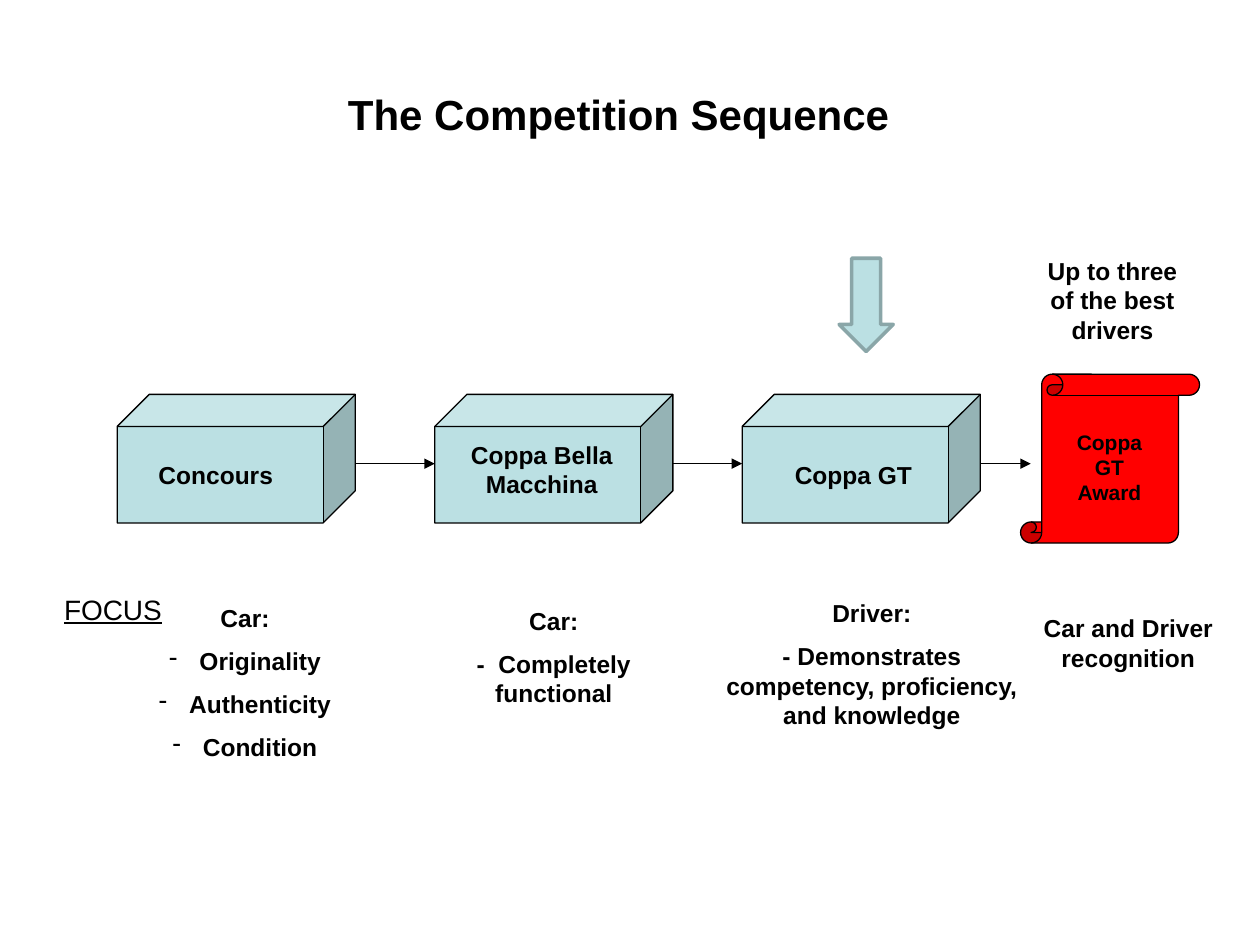
from lxml import etree
from pptx import Presentation
from pptx.dml.color import RGBColor
from pptx.enum.shapes import MSO_CONNECTOR, MSO_SHAPE
from pptx.enum.text import MSO_ANCHOR, PP_ALIGN
from pptx.oxml.ns import qn
from pptx.util import Inches, Pt

CUBE, SCROLL, DOWN = MSO_SHAPE.CUBE, MSO_SHAPE.VERTICAL_SCROLL, MSO_SHAPE.DOWN_ARROW
LINE = MSO_CONNECTOR.STRAIGHT
LEFT, MID = PP_ALIGN.LEFT, PP_ALIGN.CENTER
CENTER = MSO_ANCHOR.MIDDLE
BLACK, BLUE, GRAY, RED = "000000", "BBE0E3", "8AA6A8", "FF0000"

TITLE = "The Competition Sequence"
COLS = [0.93, 3.45, 5.89]
ENDS = [3.45, 5.89, 8.18]
TOP, WIDE, HIGH = 3.13, 1.89, 1.02
FLOW = 3.68
INDENT = 0.24

SHAPES = [(CUBE, (x, TOP, WIDE, HIGH), [0.25], BLUE, BLACK, 0.75) for x in COLS] + [
    (SCROLL, (8.1, 2.97, 1.42, 1.34), [0.125], RED, BLACK, 0.75),
    (DOWN, (6.66, 2.05, 0.43, 0.74), [0.536, 0.5], BLUE, GRAY, 2),
]
LABELS = [
    ((1.16, 3.6, 1.57, 0.33), LEFT, 14, ["Concours"]),
    ((3.59, 3.44, 1.42, 0.57), MID, 14, ["Coppa Bella Macchina"]),
    ((6.21, 3.6, 1.34, 0.33), LEFT, 14, ["Coppa GT"]),
    ((8.41, 3.36, 0.79, 0.7), MID, 12, ["Coppa GT Award"]),
    ((8.2, 1.98, 1.26, 0.81), MID, 14, ["Up to three of the best drivers"]),
    ((3.37, 4.76, 2.05, 0.93), MID, 14, ["Car:", "-  Completely functional"]),
    ((5.66, 4.7, 2.52, 1.16), MID, 14,
     ["Driver:", "- Demonstrates competency, proficiency, and knowledge"]),
    ((8.03, 4.82, 1.85, 0.57), MID, 14, ["Car and Driver recognition"]),
]
FOCUS = ((0.41, 4.65, 1.05, 0.37), LEFT, 16, ["FOCUS"])
GOALS = ((0.96, 4.74, 1.97, 1.4), MID, 14,
         ["Car:", "Originality", "Authenticity", "Condition"])


def color(code):
    return RGBColor.from_string(code)


def style(par, size, bold=True):
    for run in par.runs:
        font = run.font
        font.name, font.size, font.bold = "Arial", Pt(size), bold
        font.color.rgb = color(BLACK)


def add_text(slide, box, align, size, lines, bold=True):
    frame = slide.shapes.add_textbox(*map(Inches, box)).text_frame
    frame.word_wrap = True
    frame.text = "\n".join(lines)
    for i, par in enumerate(frame.paragraphs):
        par.alignment = align
        par.space_before = Pt(size * 0.55 if i else 0)
        style(par, size, bold)
    return frame.paragraphs


def add_form(slide, kind, box, adjust, fill, edge, width):
    form = slide.shapes.add_shape(kind, *map(Inches, box))
    form.shadow.inherit = False
    for i, value in enumerate(adjust):
        form.adjustments[i] = value
    form.fill.solid()
    form.fill.fore_color.rgb = color(fill)
    form.line.color.rgb = color(edge)
    form.line.width = Pt(width)


def add_arrow(slide, start, end):
    x, y, far = Inches(start), Inches(FLOW), Inches(end)
    link = slide.shapes.add_connector(LINE, x, y, far, y)
    link.line.color.rgb = color(BLACK)
    link.line.width = Pt(0.75)
    etree.SubElement(link.line._get_or_add_ln(), qn("a:tailEnd"), type="triangle")
    etree.SubElement(link._element.spPr, qn("a:effectLst"))


def add_dash(par):
    props = par._p.get_or_add_pPr()
    props.set("marL", str(Inches(INDENT)))
    props.set("indent", str(-Inches(INDENT)))
    etree.SubElement(props, qn("a:buChar"), char="-")


def main():
    deck = Presentation()
    deck.slide_width, deck.slide_height = Inches(10), Inches(7.5)
    slide = deck.slides.add_slide(deck.slide_layouts[5])

    title = slide.shapes.title
    title.left, title.top, title.width, title.height = map(Inches, (0.41, 0.28, 9, 1.25))
    title.text_frame.text = TITLE
    title.text_frame.vertical_anchor = CENTER
    title.text_frame.paragraphs[0].alignment = MID
    style(title.text_frame.paragraphs[0], 24)

    for form in SHAPES:
        add_form(slide, *form)
    for x, end in zip(COLS, ENDS):
        add_arrow(slide, x + WIDE, end)
    for label in LABELS:
        add_text(slide, *label)
    for par in add_text(slide, *GOALS)[1:]:
        add_dash(par)
    add_text(slide, *FOCUS, bold=False)[0].runs[0].font.underline = True

    deck.save("out.pptx")


if __name__ == "__main__":
    main()
